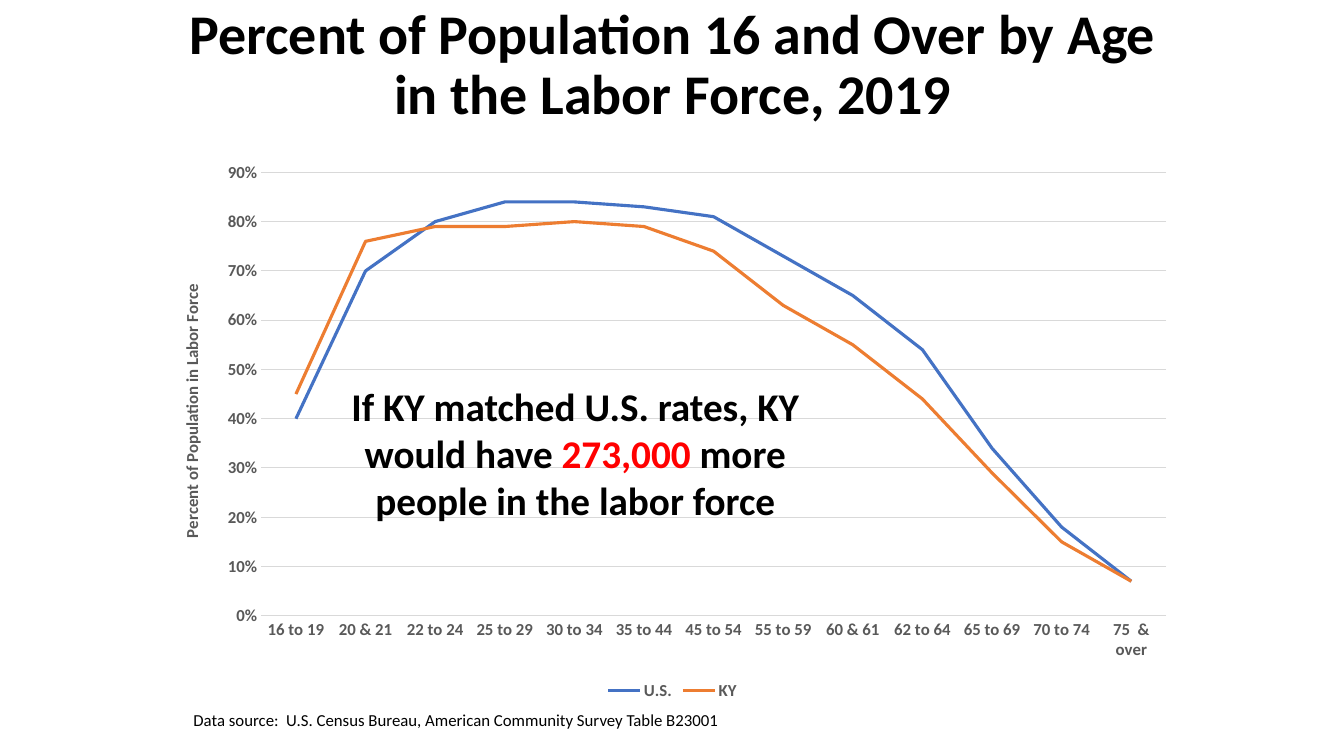
import pptx
import pptx.chart.data
import pptx.dml.color
import pptx.enum.chart
import pptx.enum.text
import pptx.oxml
import pptx.oxml.ns
import pptx.util

Inches = pptx.util.Inches
Align = pptx.enum.text.PP_ALIGN
FONT = "Calibri"
BLACK, RED, GRAY, GRID = "000000", "FF0000", "595959", "D9D9D9"

AGE_GROUPS = [
    "16 to 19", "20 & 21", "22 to 24", "25 to 29", "30 to 34", "35 to 44", "45 to 54",
    "55 to 59", "60 & 61", "62 to 64", "65 to 69", "70 to 74", "75  & over",
]
# Name, line colour, participation rates
RATES = [
    ("U.S.", "4472C4",
     [0.4, 0.7, 0.8, 0.84, 0.84, 0.83, 0.81, 0.73, 0.65, 0.54, 0.34, 0.18, 0.07]),
    ("KY", "ED7D31",
     [0.45, 0.76, 0.79, 0.79, 0.8, 0.79, 0.74, 0.63, 0.55, 0.44, 0.29, 0.15, 0.07]),
]


def color(value):
    return pptx.dml.color.RGBColor.from_string(value)


def format_font(font, size, fill=BLACK, bold=False):
    font.name = FONT
    font.size = pptx.util.Pt(size)
    font.bold = bold
    font.color.rgb = color(fill)


def format_line(line, fill, width):
    line.color.rgb = color(fill)
    line.width = pptx.util.Pt(width)


def write_text(paragraph, text, size, fill=BLACK, bold=False, align=None):
    """Append text to the paragraph; a newline becomes a line break."""
    if align is not None:
        paragraph.alignment = align
    for number, part in enumerate(text.split("\n")):
        if number:
            paragraph.add_line_break()
        run = paragraph.add_run()
        run.text = part
        format_font(run.font, size, fill, bold)


def add_text_box(slide, box):
    shape = slide.shapes.add_textbox(*map(Inches, box))
    shape.text_frame.word_wrap = True
    return shape.text_frame.paragraphs[0]


def place_title(slide, box):
    title = slide.shapes.title
    title.left, title.top, title.width, title.height = map(Inches, box)
    frame = title.text_frame
    frame.auto_size = pptx.enum.text.MSO_AUTO_SIZE.NONE
    frame.word_wrap = True
    frame.vertical_anchor = pptx.enum.text.MSO_ANCHOR.MIDDLE
    frame.margin_left = frame.margin_top = frame.margin_right = frame.margin_bottom = 0
    paragraph = frame.paragraphs[0]
    paragraph.line_spacing = 0.9
    write_text(paragraph, "Percent of Population 16 and Over by Age\nin the Labor Force, 2019",
               40, bold=True, align=Align.CENTER)


def set_plot_layout(chart, **fractions):
    """Fix the inner plot area as fractions of the chart's box."""
    plot_area = chart.element.find(".//" + pptx.oxml.ns.qn("c:plotArea"))
    for layout in plot_area.findall(pptx.oxml.ns.qn("c:layout")):
        plot_area.remove(layout)
    sizes = "".join(f'<c:{key} val="{value}"/>' for key, value in fractions.items())
    plot_area.insert(0, pptx.oxml.parse_xml(
        f'<c:layout {pptx.oxml.ns.nsdecls("c")}><c:manualLayout>'
        '<c:layoutTarget val="inner"/><c:xMode val="edge"/><c:yMode val="edge"/>'
        f'{sizes}</c:manualLayout></c:layout>'))


def add_rate_chart(slide, box):
    data = pptx.chart.data.CategoryChartData(number_format="0%")
    data.categories = AGE_GROUPS
    for name, _, values in RATES:
        data.add_series(name, values)
    chart = slide.shapes.add_chart(
        pptx.enum.chart.XL_CHART_TYPE.LINE, *map(Inches, box), data).chart
    chart.has_title = False
    format_font(chart.font, 10)
    set_plot_layout(chart, x=0.1, y=0.04, w=0.88, h=0.8)

    # Series lines
    chart.plots[0].vary_by_categories = False
    for series, (_, fill, _) in zip(chart.plots[0].series, RATES):
        series.smooth = False
        series.marker.style = pptx.enum.chart.XL_MARKER_STYLE.NONE
        format_line(series.format.line, fill, 2.25)

    # Axes
    rate_axis, age_axis = chart.value_axis, chart.category_axis
    for axis in (rate_axis, age_axis):
        axis.major_tick_mark = axis.minor_tick_mark = pptx.enum.chart.XL_TICK_MARK.NONE
        format_font(axis.tick_labels.font, 12, GRAY, bold=True)
    format_line(age_axis.format.line, GRID, 0.75)
    rate_axis.format.line.fill.background()
    rate_axis.minimum_scale, rate_axis.maximum_scale, rate_axis.major_unit = 0, 0.9, 0.1
    rate_axis.tick_labels.number_format = "0%"
    rate_axis.tick_labels.number_format_is_linked = False
    format_line(rate_axis.major_gridlines.format.line, GRID, 0.75)
    write_text(rate_axis.axis_title.text_frame.paragraphs[0],
               "Percent of Population in Labor Force", 12, GRAY, bold=True)

    # Legend
    chart.has_legend = True
    chart.legend.position = pptx.enum.chart.XL_LEGEND_POSITION.BOTTOM
    chart.legend.include_in_layout = False
    format_font(chart.legend.font, 12, GRAY, bold=True)


def add_callout(slide, box):
    paragraph = add_text_box(slide, box)
    for text, fill in (("If KY matched U.S. rates, KY would have ", BLACK),
                       ("273,000", RED),
                       (" more people in the labor force", BLACK)):
        write_text(paragraph, text, 28, fill, bold=True, align=Align.CENTER)


def add_data_source(slide, box):
    write_text(add_text_box(slide, box),
               "Data source:  U.S. Census Bureau, American Community Survey Table B23001", 12)


def main():
    presentation = pptx.Presentation()
    presentation.slide_width = Inches(13.33)
    presentation.slide_height = Inches(7.5)
    slide = presentation.slides.add_slide(presentation.slide_layouts.get_by_name("Title Only"))
    place_title(slide, (1.57, 0.27, 10.2, 0.78))
    add_rate_chart(slide, (1.57, 1.49, 10.2, 5.5))
    add_callout(slide, (3.15, 3.74, 5.11, 1.51))
    add_data_source(slide, (1.82, 6.99, 7.41, 0.3))
    presentation.save("out.pptx")


if __name__ == "__main__":
    main()
